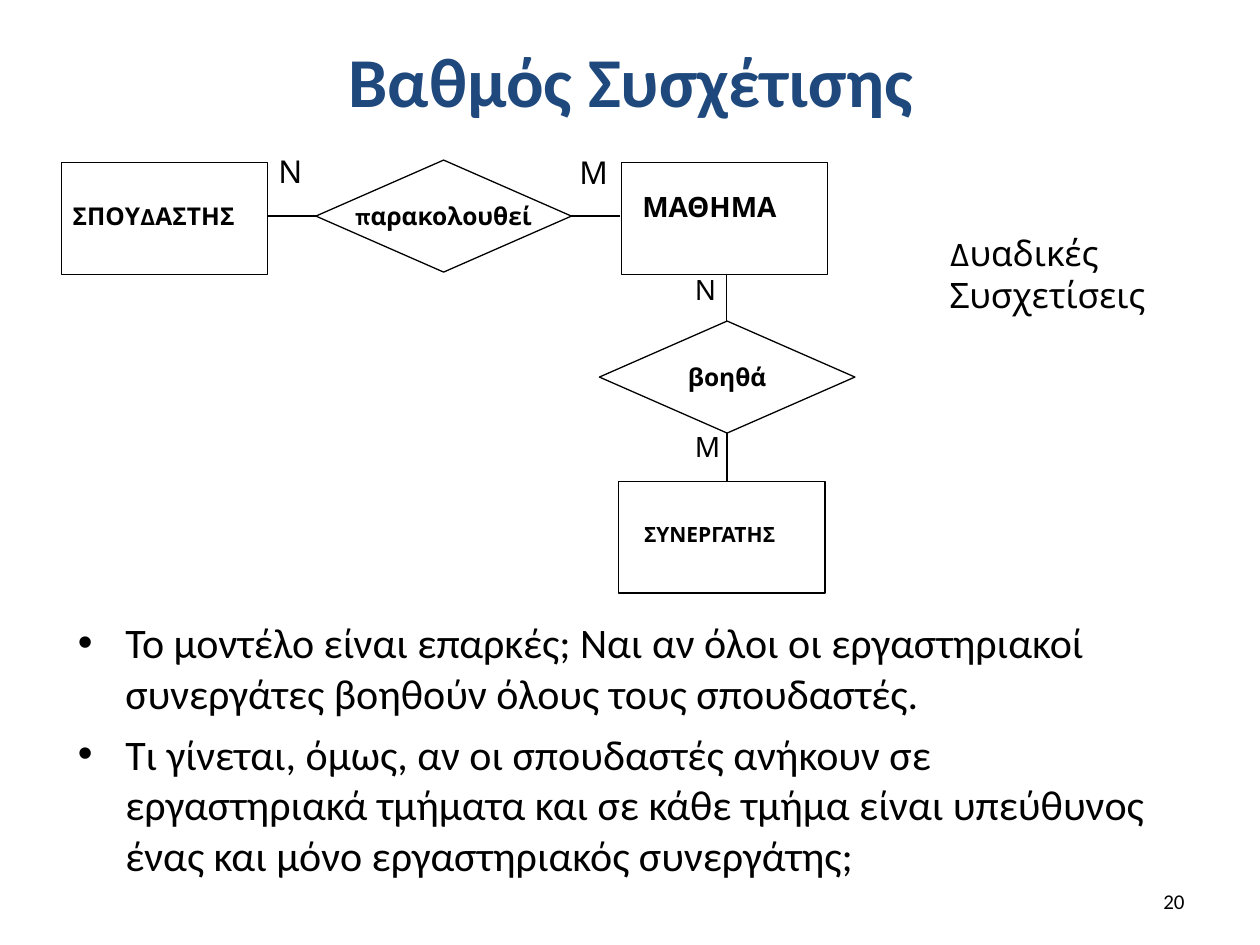
import pptx
import pptx.dml.color
import pptx.enum.shapes
import pptx.enum.text
import pptx.oxml
import pptx.oxml.ns
import pptx.util

Pt = pptx.util.Pt
Shapes = pptx.enum.shapes.MSO_SHAPE
Align = pptx.enum.text.PP_ALIGN
Anchor = pptx.enum.text.MSO_ANCHOR
COLORS = {"text": "000000", "title": "1F497D", "line": "000000"}
NAMESPACE = pptx.oxml.ns.nsdecls("a")
HANGING = 27


def color(name):
    return pptx.dml.color.RGBColor.from_string(COLORS[name])


def write_text(shape, text, *, size, font="Karla", bold=False, ink="text",
               align=Align.LEFT, anchor=Anchor.TOP, wrap=True, grow=False,
               hanging=0, bullet=False, before=0):
    """Fill a shape with text, one paragraph for each line."""
    frame = shape.text_frame
    frame.text = text
    frame.word_wrap = wrap
    frame.vertical_anchor = anchor
    if grow:
        frame.auto_size = pptx.enum.text.MSO_AUTO_SIZE.SHAPE_TO_FIT_TEXT
    for paragraph in frame.paragraphs:
        paragraph.alignment = align
        paragraph.space_before = Pt(before)
        properties = paragraph._p.get_or_add_pPr()
        if hanging:
            properties.set("marL", str(Pt(hanging)))
            properties.set("indent", str(-Pt(hanging)))
        if bullet:
            for tag in ('a:buFont {} typeface="Arial"', 'a:buChar {} char="•"'):
                properties.append(pptx.oxml.parse_xml(f"<{tag.format(NAMESPACE)}/>"))
        for run in paragraph.runs:
            run.font.name = font
            run.font.size = Pt(size)
            run.font.bold = bold
            run.font.color.rgb = color(ink)


class DiagramSlide:
    line_width = 0.75
    entity_size = (118, 64)
    relation_size = (146, 64)

    def __init__(self, slide):
        self.slide = slide

    def text(self, box, text, **style):
        shape = self.slide.shapes.add_textbox(*map(Pt, box))
        write_text(shape, text, **style)

    def label(self, box, text, **style):
        self.text(box, text, wrap=False, grow=True, **style)

    def outline(self, kind, position, size):
        shape = self.slide.shapes.add_shape(kind, *map(Pt, position + size))
        shape.shadow.inherit = False
        shape.fill.background()
        shape.line.color.rgb = color("line")
        shape.line.width = Pt(self.line_width)
        return shape

    def entity(self, position, name, name_box, size):
        self.outline(Shapes.RECTANGLE, position, self.entity_size)
        self.label(name_box, name, size=size, bold=True)

    def relation(self, position, name):
        shape = self.outline(Shapes.DIAMOND, position, self.relation_size)
        write_text(shape, name, size=14, bold=True, align=Align.CENTER,
                   anchor=Anchor.MIDDLE, wrap=False)

    def link(self, *ends):
        connector = self.slide.shapes.add_connector(
            pptx.enum.shapes.MSO_CONNECTOR.STRAIGHT, *map(Pt, ends))
        connector.line.color.rgb = color("line")
        connector.line.width = Pt(self.line_width)
        connector._element.spPr.append(
            pptx.oxml.parse_xml(f"<a:effectLst {NAMESPACE}/>"))


def main():
    presentation = pptx.Presentation()
    presentation.slide_width = Pt(720)
    presentation.slide_height = Pt(540)
    page = DiagramSlide(presentation.slides.add_slide(presentation.slide_layouts[6]))

    # Title
    page.text((36.5, 9.5, 648, 71.5), "Βαθμός Συσχέτισης", size=40,
              font="Calibri", bold=True, ink="title", align=Align.CENTER,
              anchor=Anchor.MIDDLE)

    # Entities and relations
    page.entity((35, 93), "ΣΠΟΥΔΑΣΤΗΣ", (34.5, 111.5, 127, 37), 14)
    page.entity((355, 93), "ΜΑΘΗΜΑ", (360, 105, 104, 40), 16)
    page.entity((353.5, 275), "ΣΥΝΕΡΓΑΤΗΣ", (361, 294.5, 108, 33), 12)
    page.relation((180.5, 91.5), "παρακολουθεί")
    page.relation((342.5, 183.5), "βοηθά")

    # Links
    page.link(180.5, 123.5, 153, 123.5)
    page.link(354.5, 123.5, 326.5, 123.5)
    page.link(415, 183.5, 415, 156.5)
    page.link(415.5, 275, 415.5, 247.5)

    # Cardinalities
    page.label((152, 83.5, 31, 44), "Ν", size=18)
    page.label((324, 84, 33, 44), "Μ", size=18)
    page.label((390, 152, 29, 40), "Ν", size=16)
    page.label((390, 242, 31, 40), "Μ", size=16)

    # Side note
    page.text((535.5, 129, 173.5, 100), "Δυαδικές\nΣυσχετίσεις", size=20,
              hanging=HANGING)

    # Questions
    page.text((37.5, 349, 631, 168),
              "Το μοντέλο είναι επαρκές; Ναι αν όλοι οι εργαστηριακοί "
              "συνεργάτες βοηθούν όλους τους σπουδαστές.\n"
              "Τι γίνεται, όμως, αν οι σπουδαστές ανήκουν σε εργαστηριακά "
              "τμήματα και σε κάθε τμήμα είναι υπεύθυνος ένας και μόνο "
              "εργαστηριακός συνεργάτης;",
              size=24, font="Calibri", hanging=HANGING, bullet=True, before=6)

    # Slide number
    page.text((516, 500.5, 168, 29), "20", size=12, font="Calibri",
              align=Align.RIGHT, anchor=Anchor.MIDDLE)

    presentation.save("out.pptx")


if __name__ == "__main__":
    main()
